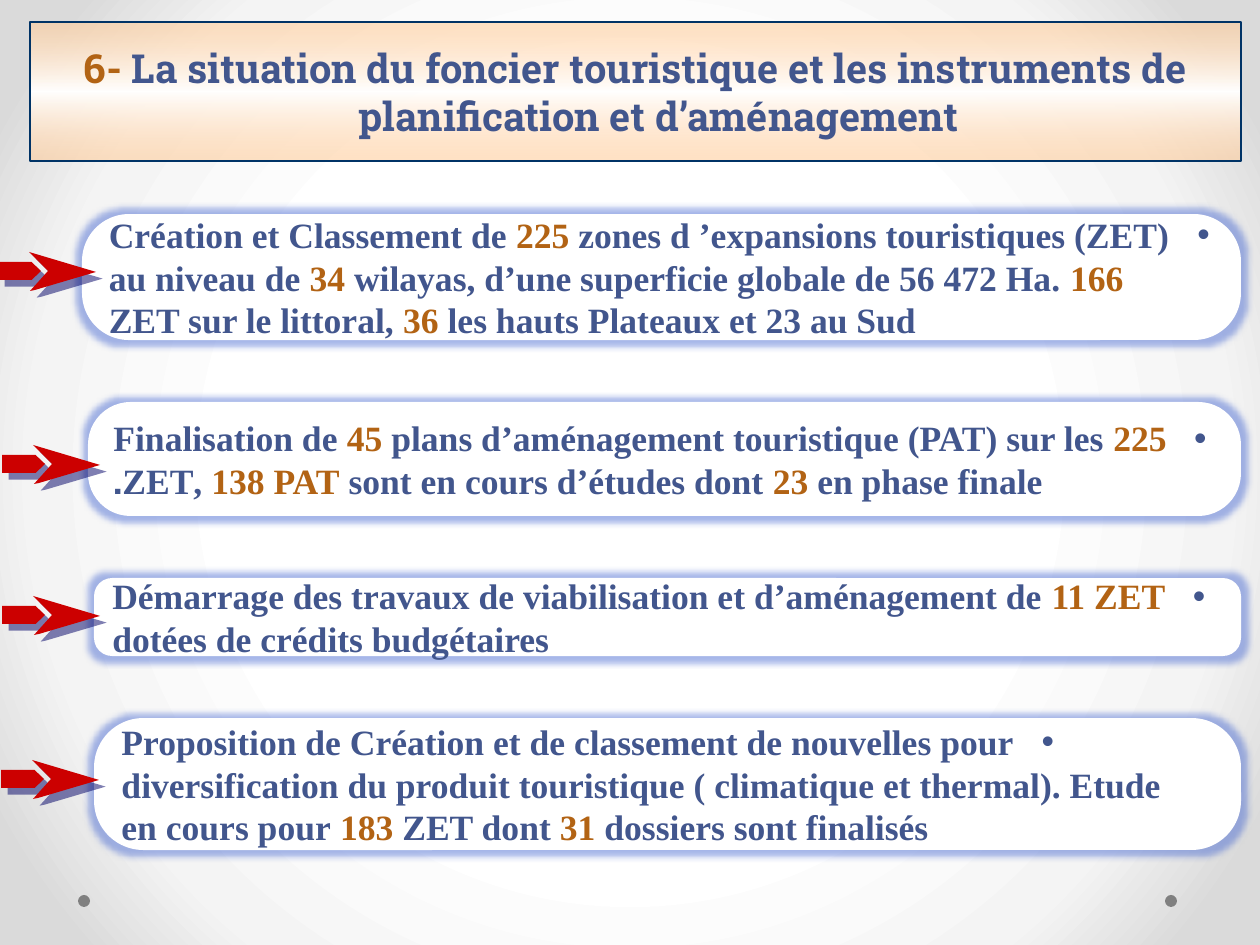
from dataclasses import dataclass
from typing import Any

import pptx
import pptx.dml.color
import pptx.enum.shapes
import pptx.enum.text
import pptx.oxml
import pptx.oxml.ns
import pptx.util

SCALE = 11430  # EMU in one px
SHAPE = pptx.enum.shapes.MSO_SHAPE
ALIGN = pptx.enum.text.PP_ALIGN
NAMESPACE = pptx.oxml.ns.nsdecls("a")


@dataclass(frozen=True)
class Theme:
    text: str = "42568D"
    accent: str = "B26314"
    panel: str = "FFFFFF"
    glow: str = "3B5FCF"
    title_tint: str = "FFCC99"
    title_line: str = "003366"
    arrow: str = "CC0000"
    arrow_shadow: str = "000066"
    dot: str = "808080"
    title_font: str = "Roboto Slab"
    body_font: str = "Times New Roman"
    title_size: int = 36
    body_size: int = 32


@dataclass(frozen=True)
class Panel:
    left: int
    top: int
    height: int
    roundness: float
    arrow_left: int
    arrow_top: int
    text: str  # *stars* enclose accented figures


THEME = Theme()
PAGE_WIDTH, PAGE_HEIGHT = 1260, 945
RIGHT_EDGE = 1241
TITLE = "*6-* La situation du foncier touristique et les instruments de planification et d’aménagement"
PANELS = [
    Panel(82, 214, 126, 0.374, -2, 262,
          "Création et Classement de *225* zones d ’expansions touristiques (ZET) au niveau de *34* wilayas, "
          "d’une superficie globale de 56 472 Ha. *166* ZET sur le littoral, *36* les hauts Plateaux et 23 au Sud"),
    Panel(88, 402, 114, 0.374, 2, 455,
          "Finalisation de *45* plans d’aménagement touristique (PAT) sur les *225* ZET, *138 PAT* "
          "sont en cours d’études dont *23* en phase finale."),
    Panel(94, 578, 78, 0.232, 2, 606,
          "Démarrage des travaux de viabilisation et d’aménagement de *11 ZET* dotées de crédits budgétaires"),
    Panel(94, 718, 132, 0.374, 1, 770,
          "Proposition de Création et de classement de nouvelles pour diversification du produit touristique "
          "( climatique et thermal). Etude en cours pour *183* ZET dont *31* dossiers sont finalisés"),
]
ARROW_HEAD = [(32, 29), (37, 28), (98, 10), (31, -10), (50, 9)]
DOT_LEFTS = [78, 1165]


def px(*lengths: int) -> list[int]:
    return [length * SCALE for length in lengths]


def rgb(value: str) -> pptx.dml.color.RGBColor:
    return pptx.dml.color.RGBColor.from_string(value)


def assign(target: Any, values: dict[str, Any]) -> None:
    for name, value in values.items():
        setattr(target, name, value)


def paint(shape: Any, color: str) -> None:
    """Give the shape a plain fill, with no line and no shadow."""
    shape.shadow.inherit = False
    shape.fill.solid()
    shape.fill.fore_color.rgb = rgb(color)
    shape.line.fill.background()


def add_effect(shape: Any, tag: str, attributes: str, color: str, alpha: int) -> None:
    effects = shape.element.spPr.xpath("a:effectLst")[0]
    effects.append(pptx.oxml.parse_xml(
        f'<a:{tag} {NAMESPACE} {attributes}><a:srgbClr val="{color}">'
        f'<a:alpha val="{alpha * 1000}"/></a:srgbClr></a:{tag}>'))


def replace_with_gradient(solid: Any, stops: list[tuple[int, str, int]], direction: str) -> None:
    """Put a gradient of (position, colour, opacity) stops in place of a solid fill."""
    marks = "".join(
        f'<a:gs pos="{position * 1000}"><a:srgbClr val="{color}"><a:alpha val="{alpha * 1000}"/></a:srgbClr></a:gs>'
        for position, color, alpha in stops)
    gradient = pptx.oxml.parse_xml(
        f'<a:gradFill {NAMESPACE} rotWithShape="1"><a:gsLst>{marks}</a:gsLst>{direction}</a:gradFill>')
    solid.getparent().replace(solid, gradient)


def write(shape: Any, text: str, font: str, size: int, align: Any, indent: int) -> Any:
    """Write one paragraph with a hanging indent, and return its properties element."""
    frame = shape.text_frame
    assign(frame, {
        "word_wrap": True,
        "auto_size": pptx.enum.text.MSO_AUTO_SIZE.NONE,
        "vertical_anchor": pptx.enum.text.MSO_ANCHOR.MIDDLE,
        "margin_left": 13 * SCALE, "margin_right": 13 * SCALE,
        "margin_top": 6 * SCALE, "margin_bottom": 6 * SCALE,
    })
    para = frame.paragraphs[0]
    para.alignment = align
    properties = para._p.get_or_add_pPr()
    properties.set("marL", str(indent * SCALE))
    properties.set("indent", str(-indent * SCALE))
    for index, part in enumerate(text.split("*")):
        if part:
            span = para.add_run()
            span.text = part
            assign(span.font, {"name": font, "size": pptx.util.Pt(size), "bold": True})
            span.font.color.rgb = rgb(THEME.accent if index % 2 else THEME.text)
    return properties


def draw_background(page: Any) -> None:
    page.background.fill.solid()
    replace_with_gradient(
        page.element.xpath(".//p:bgPr/a:solidFill")[0],
        [(50, "FFFFFF", 100), (76, "F4F4F4", 100), (92, "DADADA", 100)],
        '<a:path path="circle"><a:fillToRect l="50000" t="50000" r="50000" b="50000"/></a:path>')


def draw_title(page: Any) -> None:
    title = page.shapes.title
    assign(title, dict(zip(("left", "top", "width", "height"), px(30, 22, RIGHT_EDGE - 30, 139))))
    properties = title.element.spPr
    properties.append(pptx.oxml.parse_xml(
        f'<a:prstGeom {NAMESPACE} prst="roundRect"><a:avLst>'
        '<a:gd name="adj" fmla="val 37400"/></a:avLst></a:prstGeom>'))
    title.fill.solid()
    replace_with_gradient(
        properties.xpath("a:solidFill")[0],
        [(0, THEME.title_tint, 57), (50, "FFFFFF", 100), (100, THEME.title_tint, 57)],
        '<a:lin ang="5400000" scaled="0"/>')
    title.line.color.rgb = rgb(THEME.title_line)
    title.line.width = pptx.util.Pt(2.5)
    write(title, TITLE, THEME.title_font, THEME.title_size, ALIGN.CENTER, 47)


def draw_panel(page: Any, panel: Panel) -> None:
    box = page.shapes.add_shape(
        SHAPE.ROUNDED_RECTANGLE, *px(panel.left, panel.top, RIGHT_EDGE - panel.left, panel.height))
    box.adjustments[0] = panel.roundness
    paint(box, THEME.panel)
    add_effect(box, "glow", 'rad="139700"', THEME.glow, 45)
    properties = write(box, panel.text, THEME.body_font, THEME.body_size, ALIGN.LEFT, 40)
    properties.set("rtl", "1")
    box.text_frame.paragraphs[0].space_after = pptx.util.Pt(15.8)
    for bullet in ('buFont {} typeface="Arial"', 'buChar {} char="•"'):
        properties.append(pptx.oxml.parse_xml(f"<a:{bullet.format(NAMESPACE)}/>"))


def draw_arrow(page: Any, left: int, top: int) -> None:
    group = page.shapes.add_group_shape()
    shaft = group.shapes.add_shape(SHAPE.PENTAGON, *px(left, top, 43, 18))
    shaft.adjustments[0] = 0.522
    points = [(left + x, top + y) for x, y in ARROW_HEAD]
    outline = group.shapes.build_freeform(*points[0], scale=SCALE)
    outline.add_line_segments(points[1:], close=True)
    for part in (shaft, outline.convert_to_shape()):
        paint(part, THEME.arrow)
        add_effect(part, "outerShdw", 'dist="107950" dir="2700000" algn="ctr" rotWithShape="0"',
                   THEME.arrow_shadow, 50)


def main() -> None:
    deck = pptx.Presentation()
    deck.slide_width, deck.slide_height = px(PAGE_WIDTH, PAGE_HEIGHT)
    page = deck.slides.add_slide(deck.slide_layouts.get_by_name("Title Only"))
    draw_background(page)
    for left in DOT_LEFTS:
        paint(page.shapes.add_shape(SHAPE.OVAL, *px(left, 895, 12, 12)), THEME.dot)
    draw_title(page)
    for panel in PANELS:
        draw_panel(page, panel)
        draw_arrow(page, panel.arrow_left, panel.arrow_top)
    deck.save("out.pptx")


if __name__ == "__main__":
    main()
